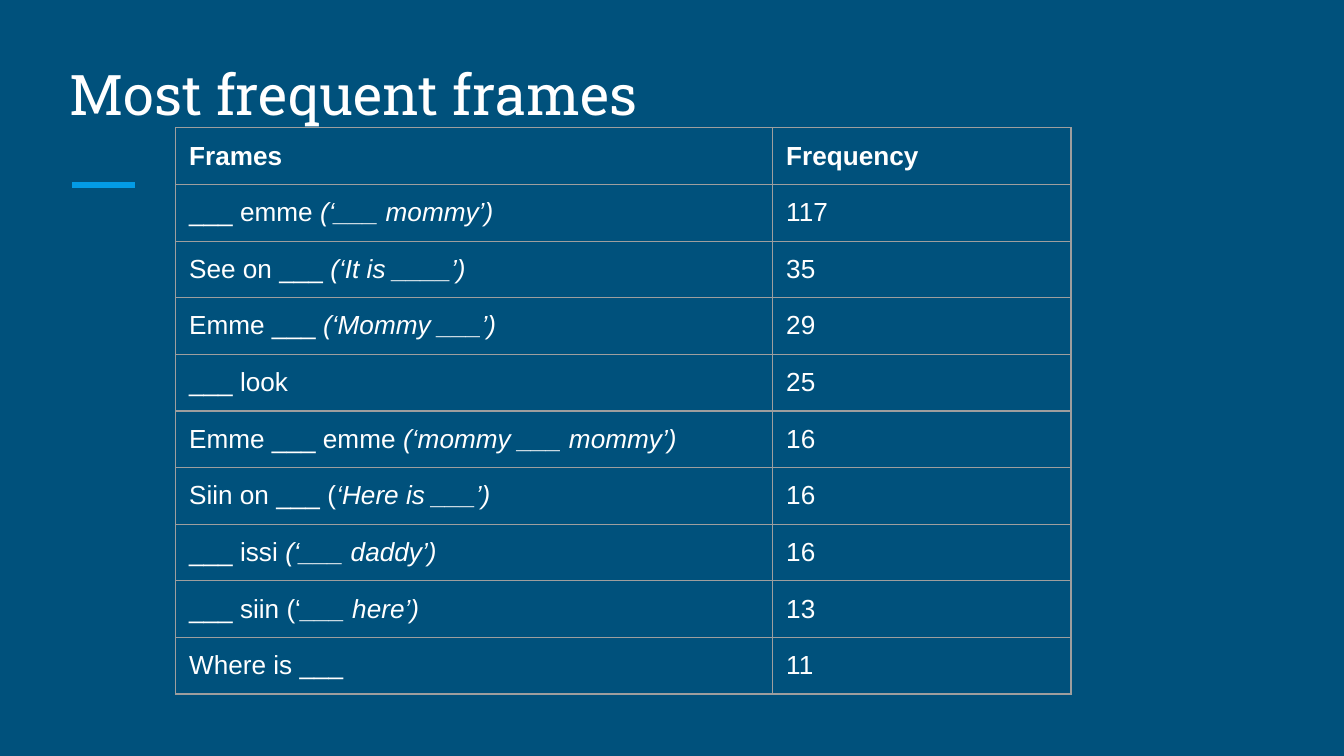
from lxml.etree import SubElement
from pptx import Presentation
from pptx.dml.color import RGBColor
from pptx.enum.shapes import MSO_CONNECTOR
from pptx.enum.text import MSO_ANCHOR, PP_ALIGN
from pptx.oxml import parse_xml
from pptx.oxml.ns import nsdecls, qn
from pptx.util import Pt

TITLE = "Most frequent frames"
HEAD = ("Frames", "", "Frequency")
# frame, its gloss in italics, frequency
FRAMES = [
    ("___ emme ", "(‘___ mommy’)", 117),
    ("See on ___ ", "(‘It is ____’)", 35),
    ("Emme ___ ", "(‘Mommy ___’)", 29),
    ("___ look", "", 25),
    ("Emme ___ emme ", "(‘mommy ___ mommy’)", 16),
    ("Siin on ___ (", "‘Here is ___’)", 16),
    ("___ issi ", "(‘___ daddy’)", 16),
    ("___ siin (‘", "___ here’)", 13),
    ("Where is ___", "", 11),
]
COLORS = {"back": "00517C", "accent": "039BE5", "text": "FFFFFF", "grid": "9E9E9E"}
LEFT, TOP = 94.1, 68.5
WIDTHS = (319.9, 159.8)
ROW = 30.35
INSET = Pt(7.2)


def color(name):
    return RGBColor.from_string(COLORS[name])


def style(para, face, size, bold=False):
    font = para.font
    font.name, font.size, font.bold = face, Pt(size), bold
    font.color.rgb = color("text")


def pad(box):
    box.margin_left = box.margin_right = INSET
    box.margin_top = box.margin_bottom = INSET


def border(cell):
    props = cell._tc.get_or_add_tcPr()
    for i, side in enumerate(("lnL", "lnR", "lnT", "lnB")):
        props.insert(i, parse_xml(
            f'<a:{side} {nsdecls("a")} w="{Pt(0.75)}"><a:solidFill>'
            f'<a:srgbClr val="{COLORS["grid"]}"/></a:solidFill></a:{side}>'))


def fill_cell(cell, plain, gloss="", bold=False):
    pad(cell)
    cell.fill.background()
    border(cell)
    para = cell.text_frame.paragraphs[0]
    style(para, "Arial", 14, bold)
    para.add_run().text = plain
    if gloss:
        run = para.add_run()
        run.text = gloss
        run.font.italic = True


def add_title(slide):
    title = slide.shapes.title
    title.left, title.top, title.width, title.height = map(Pt, (30.2, 20.9, 658.8, 54))
    frame = title.text_frame
    frame.text = TITLE
    frame.word_wrap = True
    frame.vertical_anchor = MSO_ANCHOR.BOTTOM
    pad(frame)
    para = frame.paragraphs[0]
    para.alignment = PP_ALIGN.LEFT
    style(para, "Roboto Slab", 30)


def add_accent(slide):
    line = slide.shapes.add_connector(
        MSO_CONNECTOR.STRAIGHT, Pt(38.7), Pt(99.2), Pt(72.3), Pt(99.2))
    line.line.color.rgb = color("accent")
    line.line.width = Pt(3)
    SubElement(line._element.spPr, qn("a:effectLst"))


def add_frames(slide):
    rows = [HEAD, *FRAMES]
    table = slide.shapes.add_table(
        len(rows), len(WIDTHS), Pt(LEFT), Pt(TOP),
        Pt(sum(WIDTHS)), Pt(ROW * len(rows))).table
    table.horz_banding = False
    for col, width in zip(table.columns, WIDTHS):
        col.width = Pt(width)
    for i, (plain, gloss, count) in enumerate(rows):
        table.rows[i].height = Pt(ROW)
        fill_cell(table.cell(i, 0), plain, gloss, bold=i == 0)
        fill_cell(table.cell(i, 1), str(count), bold=i == 0)


def main():
    deck = Presentation()
    deck.slide_width, deck.slide_height = Pt(720), Pt(405)
    slide = deck.slides.add_slide(deck.slide_layouts[5])
    back = slide.background.fill
    back.solid()
    back.fore_color.rgb = color("back")
    add_accent(slide)
    add_title(slide)
    add_frames(slide)
    deck.save("out.pptx")


if __name__ == "__main__":
    main()
